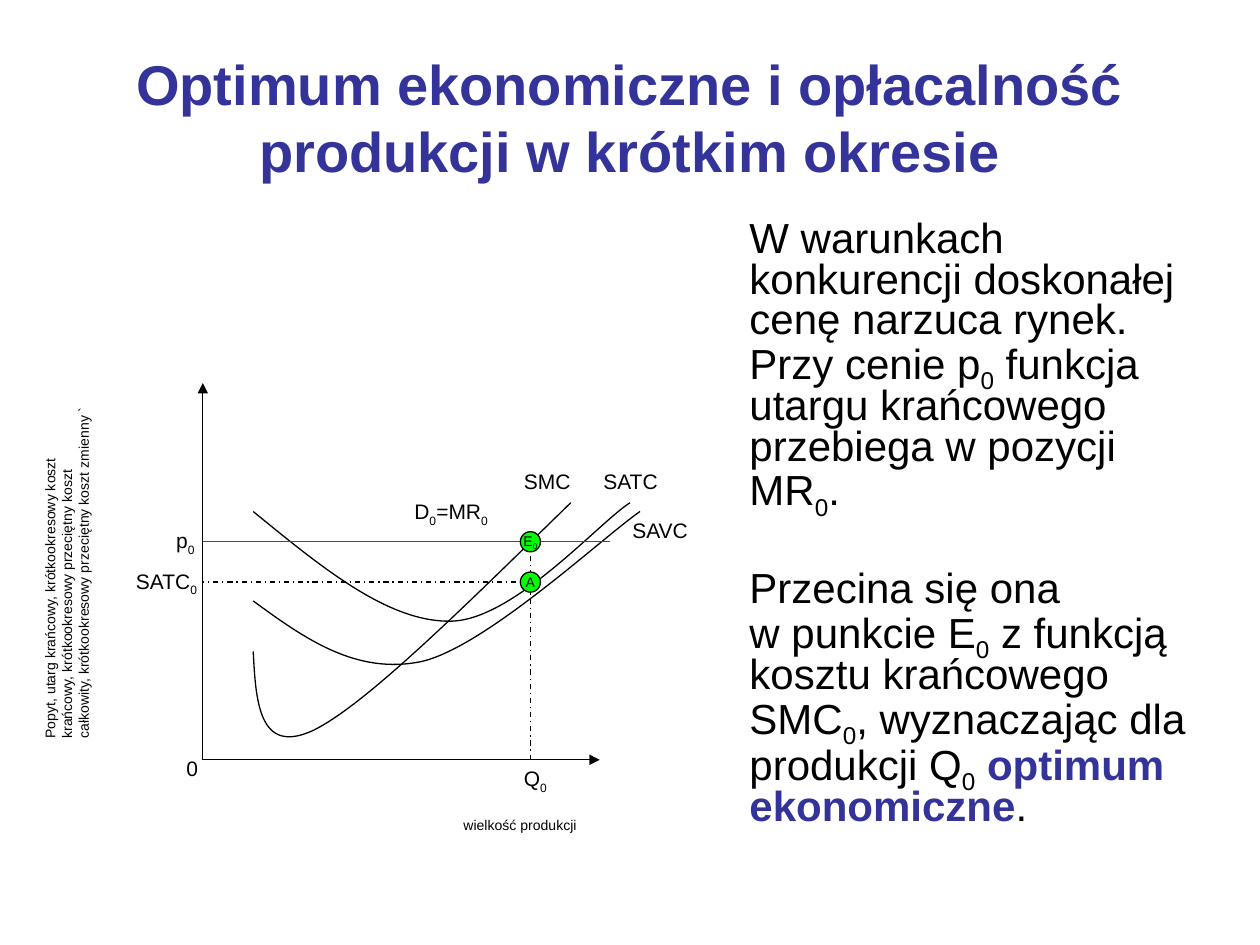
"""Build the slide on the short-run economic optimum of production."""
from pptx import Presentation
from pptx.dml.color import RGBColor
from pptx.enum.dml import MSO_LINE
from pptx.enum.shapes import MSO_CONNECTOR, MSO_SHAPE
from pptx.enum.text import MSO_ANCHOR, PP_ALIGN
from pptx.oxml.ns import qn
from pptx.util import Inches, Pt
from lxml.etree import SubElement

BLACK = RGBColor(0, 0, 0)
BLUE = RGBColor(0x33, 0x33, 0x99)
RED = RGBColor(0xFF, 0, 0)
GREEN = RGBColor(0, 0xFF, 0)

TITLE = "*Optimum ekonomiczne i opłacalność produkcji w krótkim okresie"
BODY = [
    "W warunkach konkurencji doskonałej cenę narzuca rynek. Przy cenie p|0"
    "| funkcja utargu krańcowego przebiega w pozycji MR|0|.",
    "Przecina się ona \nw punkcie E|0| z funkcją kosztu krańcowego SMC|0"
    "|, wyznaczając dla produkcji Q|0| ||*optimum ekonomiczne||.",
]
LEFT, BASE, OPT, PRICE, COST = 1.61, 6.03, 4.21, 4.3, 4.62
AXES = [((LEFT, BASE), (LEFT, 3.04)), ((LEFT, BASE), (4.76, BASE))]
DASHES = [((OPT, PRICE), (OPT, BASE)), ((OPT, COST), (LEFT, COST))]
CURVES = [
    [(2.01, 5.17), (2.03, 5.58), (2.06, 5.99), (2.48, 5.8),
     (2.9, 5.6), (3.71, 4.79), (4.53, 3.99)],
    [(2.01, 4.06), (2.55, 4.5), (3.08, 4.94), (3.58, 4.93),
     (4.08, 4.92), (4.76, 4.14), (5, 3.99)],
    [(2.01, 4.77), (2.42, 5.07), (2.83, 5.36), (3.35, 5.25),
     (3.86, 5.13), (4.79, 4.26), (5.08, 4.06)],
]
DOTS = [("E|0", PRICE), ("A", COST)]
DOT = 0.16
LABELS = [
    ("p|0", 1.3, 4.14, 0.39),
    ("SATC|0", 0.98, 4.46, 0.71),
    ("0", 1.38, 5.95, 0.32),
    ("Q|0", 4.06, 6.03, 0.63),
    ("D|0|=MR|0", 3.19, 3.91, 0.86),
    ("SMC", 4.06, 3.67, 0.71),
    ("SATC", 4.69, 3.67, 0.87),
    ("SAVC", 4.92, 4.06, 1.34),
]
XNAME = "wielkość produkcji"
YNAME = ("Popyt, utarg krańcowy, krótkookresowy koszt "
         "krańcowy, krótkookresowy przeciętny koszt\n"
         "całkowity, krótkookresowy przeciętny koszt zmienny `")


def write(para, text, size):
    for num, part in enumerate(text.split("|")):
        bold = part.startswith("*")
        for row, words in enumerate(part.lstrip("*").split("\n")):
            if row:
                para.add_line_break()
            if not words:
                continue
            run = para.add_run()
            run.text = words
            font = run.font
            font.name, font.size, font.bold = "Arial", Pt(size), bold
            font.color.rgb = BLUE if bold else BLACK
            if num % 2:
                run._r.get_or_add_rPr().set("baseline", "-25000")


def add_box(slide, text, size, x, y, w, h):
    box = slide.shapes.add_textbox(Inches(x), Inches(y), Inches(w), Inches(h))
    box.text_frame.word_wrap = True
    write(box.text_frame.paragraphs[0], text, size)
    return box


def add_line(slide, start, end, color=BLACK):
    ends = [Inches(v) for v in (*start, *end)]
    line = slide.shapes.add_connector(MSO_CONNECTOR.STRAIGHT, *ends)
    line.line.color.rgb = color
    line.line.width = Pt(0.75)
    SubElement(line._element.spPr, qn("a:effectLst"))
    return line


def add_curve(slide, nodes):
    first, *rest = [(Inches(x), Inches(y)) for x, y in nodes]
    form = slide.shapes.build_freeform(*first)
    form.add_line_segments(rest, close=False)
    curve = form.convert_to_shape()
    track = next(curve._element.iter(qn("a:path")))
    legs = track.findall(qn("a:lnTo"))
    for i in range(0, len(legs), 3):
        bend = SubElement(track, qn("a:cubicBezTo"))
        for leg in legs[i:i + 3]:
            bend.append(leg[0])
            track.remove(leg)
    curve.shadow.inherit = False
    curve.fill.background()
    curve.line.color.rgb = BLACK
    curve.line.width = Pt(0.75)


def add_dot(slide, text, y):
    dot = slide.shapes.add_shape(
        MSO_SHAPE.OVAL, Inches(OPT - DOT / 2), Inches(y - DOT / 2),
        Inches(DOT), Inches(DOT))
    dot.shadow.inherit = False
    dot.fill.solid()
    dot.fill.fore_color.rgb = GREEN
    dot.line.color.rgb = BLACK
    dot.line.width = Pt(0.75)
    frame = dot.text_frame
    frame.word_wrap = False
    frame.vertical_anchor = MSO_ANCHOR.MIDDLE
    frame.paragraphs[0].alignment = PP_ALIGN.CENTER
    write(frame.paragraphs[0], text, 8)


def add_body(slide):
    frame = add_box(slide, BODY[0], 24, 5.47, 1.71, 4.04, 5.35).text_frame
    last = frame.add_paragraph()
    write(last, BODY[1], 24)
    last.space_before = Pt(32)
    for para in frame.paragraphs:
        para.line_spacing = 0.8
        props = para._p.get_or_add_pPr()
        props.set("marL", str(Inches(0.38)))
        props.set("indent", "0")


def main():
    deck = Presentation()
    deck.slide_width, deck.slide_height = Inches(10), Inches(7.5)
    slide = deck.slides.add_slide(deck.slide_layouts[6])
    title = add_box(slide, TITLE, 32, 0.5, 0.3, 9, 1.25).text_frame
    title.vertical_anchor = MSO_ANCHOR.MIDDLE
    title.paragraphs[0].alignment = PP_ALIGN.CENTER
    add_body(slide)
    for ends in AXES:
        axis = add_line(slide, *ends)
        SubElement(axis.line._get_or_add_ln(), qn("a:tailEnd"), type="triangle")
    for nodes in CURVES:
        add_curve(slide, nodes)
    add_line(slide, (LEFT, PRICE), (4.84, PRICE), RED)
    for ends in DASHES:
        add_line(slide, *ends).line.dash_style = MSO_LINE.DASH_DOT
    for text, y in DOTS:
        add_dot(slide, text, y)
    for text, x, y, w in LABELS:
        add_box(slide, text, 12, x, y, w, 0.3)
    add_box(slide, YNAME, 8, -0.89, 4.29, 2.84, 0.5).rotation = 270
    add_box(slide, XNAME, 8, 3.58, 6.43, 1.97, 0.23)
    deck.save("out.pptx")


if __name__ == "__main__":
    main()
